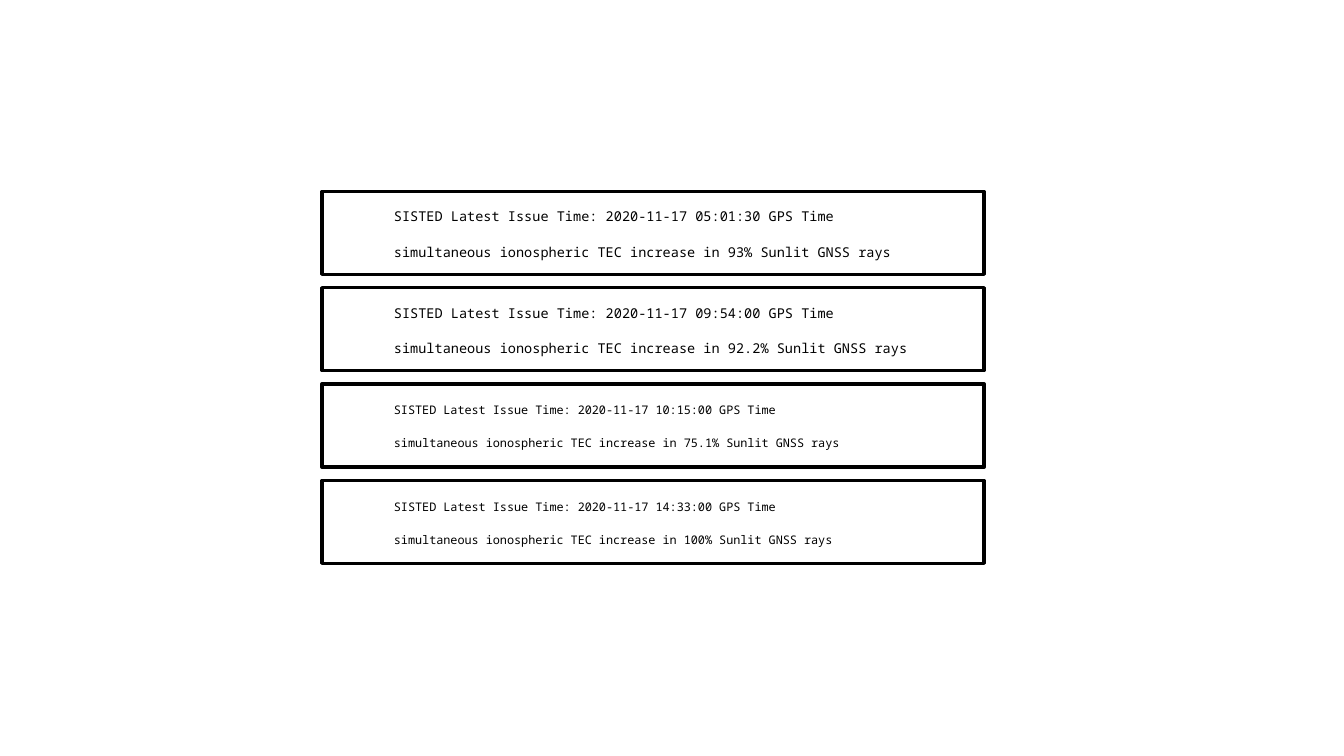
import pptx
import pptx.util
import pptx.dml.color
import pptx.enum.shapes
import pptx.enum.text

ALERTS = [
    ("05:01:30", "93%", 8),
    ("09:54:00", "92.2%", 8),
    ("10:15:00", "75.1%", 7),
    ("14:33:00", "100%", 7),
]
LEFT, TOP, WIDTH, HEIGHT, STEP = 2.64, 1.57, 5.43, 0.68, 0.79
FONT = "Noto Sans Mono"
BLACK = pptx.dml.color.RGBColor(0, 0, 0)
WHITE = pptx.dml.color.RGBColor(255, 255, 255)
Inches = pptx.util.Inches
Pt = pptx.util.Pt


def add_alert(slide, top, time, share, size):
    box = slide.shapes.add_shape(
        pptx.enum.shapes.MSO_SHAPE.RECTANGLE,
        Inches(LEFT), Inches(top), Inches(WIDTH), Inches(HEIGHT))
    box.shadow.inherit = False
    box.fill.solid()
    box.fill.fore_color.rgb = WHITE
    box.line.color.rgb = BLACK
    box.line.width = Pt(2)
    frame = box.text_frame
    frame.word_wrap = True
    frame.vertical_anchor = pptx.enum.text.MSO_ANCHOR.MIDDLE
    frame.margin_left = Inches(0.59)
    frame.text = (f"SISTED Latest Issue Time: 2020-11-17 {time} GPS Time\n"
                  f"simultaneous ionospheric TEC increase in {share} Sunlit GNSS rays")
    for line in frame.paragraphs:
        line.alignment = pptx.enum.text.PP_ALIGN.LEFT
        line.line_spacing = 1.15
        line.space_after = Pt(10)
        line.font.name = FONT
        line.font.size = Pt(size)
        line.font.color.rgb = BLACK


def main():
    deck = pptx.Presentation()
    deck.slide_width = Inches(11.02)
    deck.slide_height = Inches(6.2)
    slide = deck.slides.add_slide(deck.slide_layouts[6])
    for row, alert in enumerate(ALERTS):
        add_alert(slide, TOP + row * STEP, *alert)
    deck.save("out.pptx")


if __name__ == "__main__":
    main()
